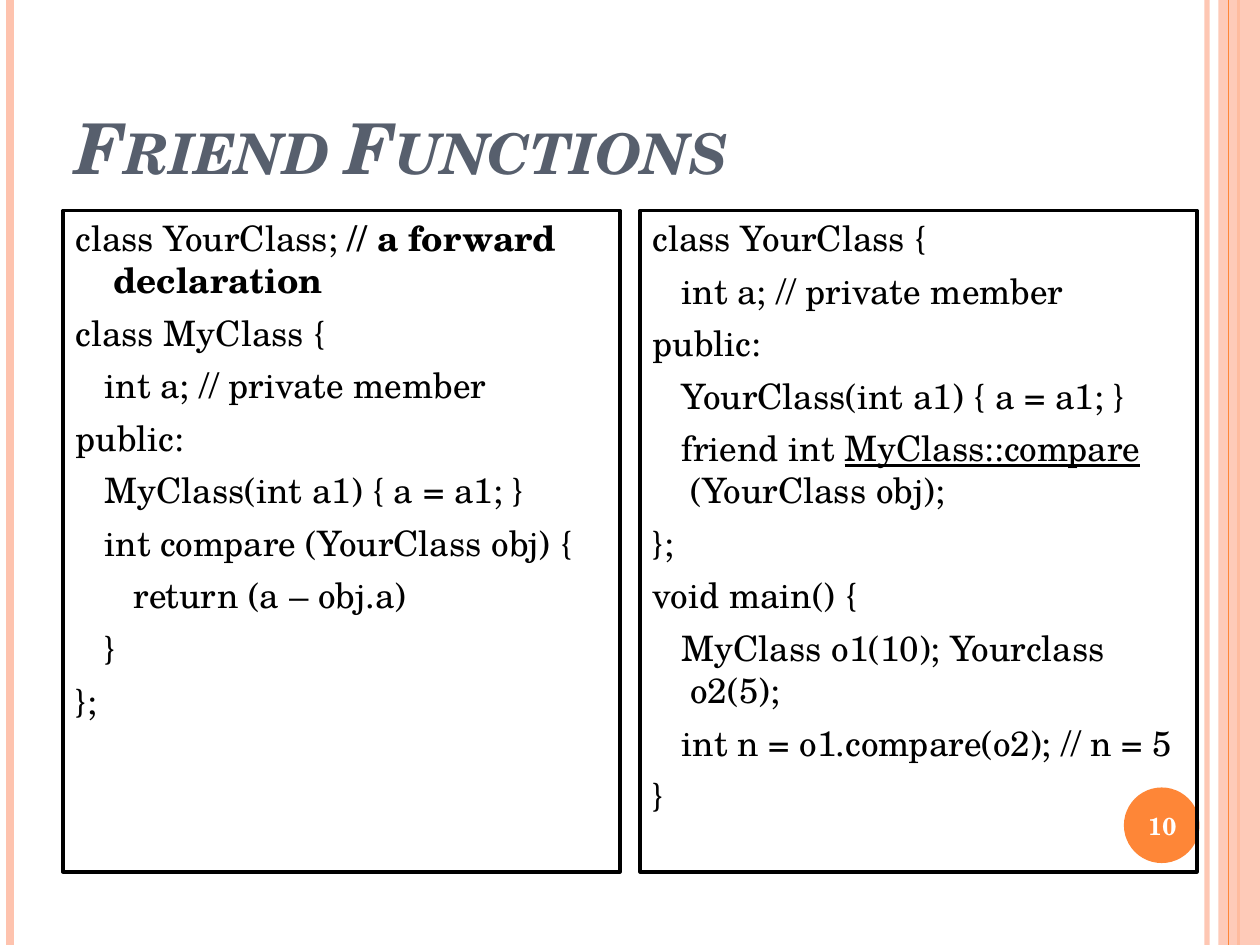
import pptx
import pptx.util
import pptx.dml.color
import pptx.enum.shapes
import pptx.enum.text
import pptx.oxml
import pptx.oxml.ns

Inches, Pt = pptx.util.Inches, pptx.util.Pt
RGBColor = pptx.dml.color.RGBColor
SHAPE = pptx.enum.shapes.MSO_SHAPE
ANCHOR = pptx.enum.text.MSO_ANCHOR
ALIGN = pptx.enum.text.PP_ALIGN
qn = pptx.oxml.ns.qn

FONT = "TeX Gyre Schola"
BLACK = RGBColor(0x00, 0x00, 0x00)
WHITE = RGBColor(0xFF, 0xFF, 0xFF)
SLATE = RGBColor(0x57, 0x5F, 0x6D)
ORANGE = RGBColor(0xFE, 0x86, 0x37)
PEACH = RGBColor(0xFE, 0xC3, 0xAE)

HANG = 0.3   # indent of wrapped lines, inches
STEP = 0.23  # indent of one code level, inches

# Each line: code level, then runs of (text, format)
MY_CLASS = [
    (0, ("class YourClass; ", {}), ("// a forward declaration", {"bold": True})),
    (0, ("class MyClass {", {})),
    (1, ("int a; // private member", {})),
    (0, ("public:", {})),
    (1, ("MyClass(int a1) { a = a1; }", {})),
    (1, ("int compare (YourClass obj) {", {})),
    (2, ("return (a – obj.a)", {})),
    (1, ("}", {})),
    (0, ("};", {})),
]
YOUR_CLASS = [
    (0, ("class YourClass {", {})),
    (1, ("int a; // private member", {})),
    (0, ("public:", {})),
    (1, ("YourClass(int a1) { a = a1; }", {})),
    (1, ("friend int ", {}), ("MyClass::compare ", {"underline": True}),
     ("(YourClass obj);", {})),
    (0, ("};", {})),
    (0, ("void main() {", {})),
    (1, ("MyClass o1(10); Yourclass o2(5);", {})),
    (1, ("int n = o1.compare(o2); // n = 5", {})),
    (0, ("}", {})),
]


def add_text(p, text, size=20, color=BLACK, bold=False, italic=False,
             underline=False, small_caps=False):
    r = p.add_run()
    r.text = text
    f = r.font
    f.name, f.size, f.color.rgb = FONT, Pt(size), color
    f.bold, f.italic, f.underline = bold, italic, underline
    if small_caps:
        r._r.get_or_add_rPr().set("cap", "small")


def add_xml(parent, tag, attributes=""):
    parent.append(pptx.oxml.parse_xml(
        f'<a:{tag} {pptx.oxml.ns.nsdecls("a")} {attributes}/>'))


def set_box(sp, x, y, w, h):
    sp.left, sp.top, sp.width, sp.height = map(Inches, (x, y, w, h))


def set_alpha(sp, percent):
    color = next(sp._element.spPr.iter(qn("a:srgbClr")))
    add_xml(color, "alpha", f'val="{percent * 1000}"')


def bring_to_front(sp):
    sp._element.getparent().append(sp._element)


def add_stripe(s, x, height, color, width, alpha=100):
    c = s.shapes.add_connector(pptx.enum.shapes.MSO_CONNECTOR.STRAIGHT,
                               Inches(x), 0, Inches(x), Inches(height))
    c.line.color.rgb = color
    c.line.width = Pt(width)
    add_xml(c._element.spPr, "effectLst")
    if alpha < 100:
        set_alpha(c, alpha)


def add_solid(s, kind, x, y, w, h, color):
    sp = s.shapes.add_shape(kind, *map(Inches, (x, y, w, h)))
    sp.shadow.inherit = False
    sp.fill.solid()
    sp.fill.fore_color.rgb = color
    sp.line.fill.background()
    return sp


def add_side_bars(s, height):
    add_stripe(s, 9.58, height, PEACH, 3, alpha=93)
    add_stripe(s, 0.08, height, PEACH, 4.5)
    add_stripe(s, 9.83, height, ORANGE, 1.5)
    set_alpha(add_solid(s, SHAPE.RECTANGLE, 9.67, 0, 0.33, height, PEACH), 87)
    add_stripe(s, 9.75, height, ORANGE, 0.75)


def add_page_number(s, x, y, size, number):
    add_solid(s, SHAPE.OVAL, x, y, size, size, ORANGE)
    sp = s.shapes.add_textbox(*map(Inches, (x - 0.03, y + 0.02, 0.67, 0.57)))
    tf = sp.text_frame
    tf.word_wrap = True
    tf.vertical_anchor = ANCHOR.MIDDLE
    p = tf.paragraphs[0]
    p.alignment = ALIGN.CENTER
    add_text(p, number, size=14, color=WHITE, bold=True)


def fill_title(sp, x, y, w, h, text):
    set_box(sp, x, y, w, h)
    bring_to_front(sp)
    tf = sp.text_frame
    tf.auto_size = pptx.enum.text.MSO_AUTO_SIZE.NONE
    tf.vertical_anchor = ANCHOR.BOTTOM
    p = tf.paragraphs[0]
    p.alignment = ALIGN.LEFT
    add_text(p, text, size=40, color=SLATE, bold=True, italic=True,
             small_caps=True)


def fill_code(sp, x, y, w, h, lines):
    set_box(sp, x, y, w, h)
    bring_to_front(sp)
    sp.line.color.rgb = BLACK
    sp.line.width = Pt(2)
    tf = sp.text_frame
    tf.auto_size = pptx.enum.text.MSO_AUTO_SIZE.NONE
    for i, (level, *runs) in enumerate(lines):
        p = tf.add_paragraph() if i else tf.paragraphs[0]
        p.space_before = Pt(6)
        # Code levels shift the first line; wrapped lines hang at HANG
        pPr = p._p.get_or_add_pPr()
        pPr.set("marL", str(Inches(HANG)))
        pPr.set("indent", str(Inches(level * STEP - HANG)))
        add_xml(pPr, "buNone")
        for text, style in runs:
            add_text(p, text, **style)


def main():
    prs = pptx.Presentation()
    prs.slide_width, prs.slide_height = Inches(10), Inches(7.5)
    s = prs.slides.add_slide(prs.slide_layouts.get_by_name("Two Content"))
    title, left, right = s.placeholders

    # Decoration lies behind the text
    add_side_bars(s, 7.5)
    add_page_number(s, 8.92, 6.25, 0.6, "10")

    # Title and the two code panels
    fill_title(title, 0.5, 0.3, 8.17, 1.25, "Friend Functions")
    width, gap = 4.42, 0.16
    for i, (sp, lines) in enumerate([(left, MY_CLASS), (right, YOUR_CLASS)]):
        fill_code(sp, 0.5 + i * (width + gap), 1.67, width, 5.25, lines)

    prs.save("out.pptx")


if __name__ == "__main__":
    main()
